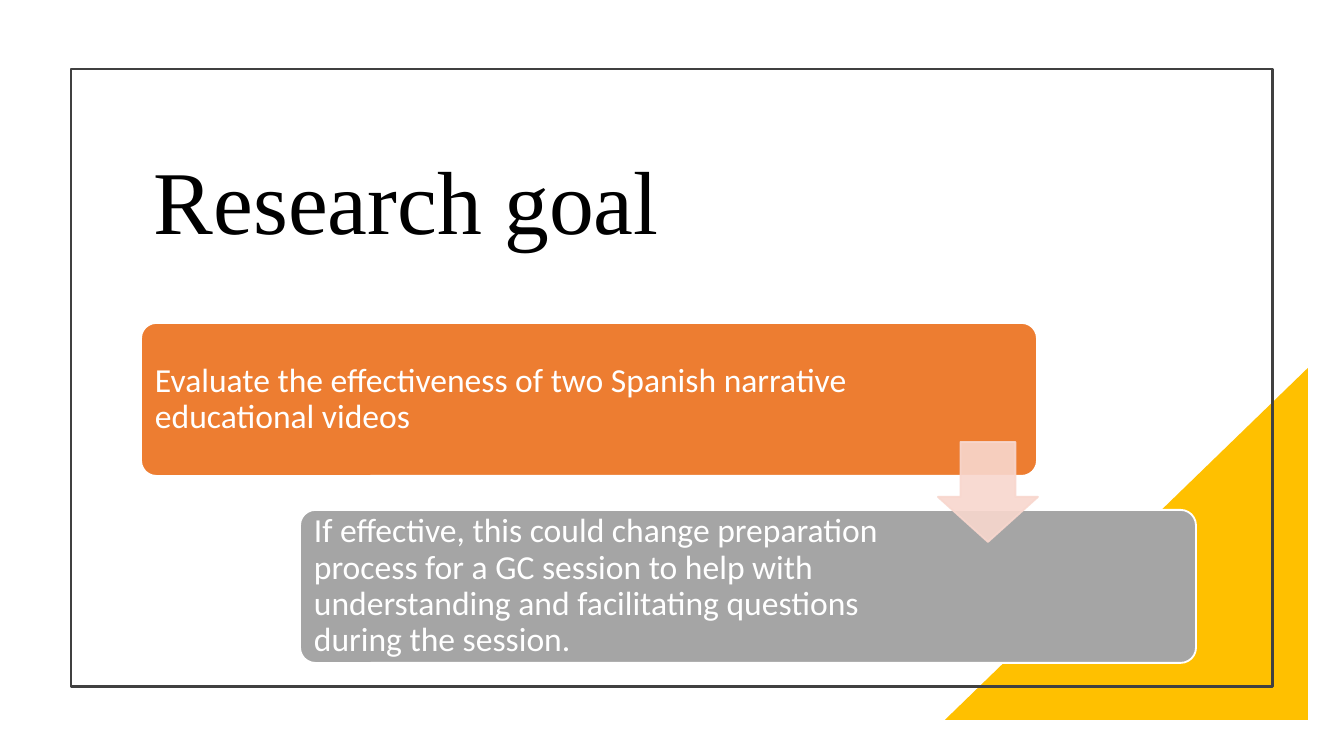
from lxml.etree import SubElement
from pptx import Presentation
from pptx.dml.color import RGBColor
from pptx.enum.shapes import MSO_SHAPE
from pptx.enum.text import MSO_ANCHOR
from pptx.oxml.ns import qn
from pptx.util import Pt

EMU_PER_PX = 914400 / 134.4

BLACK = RGBColor(0x00, 0x00, 0x00)
WHITE = RGBColor(0xFF, 0xFF, 0xFF)
CHARCOAL = RGBColor(0x40, 0x40, 0x40)
GOLD = RGBColor(0xFF, 0xC0, 0x00)
ORANGE = RGBColor(0xED, 0x7D, 0x31)
GRAY = RGBColor(0xA5, 0xA5, 0xA5)
PINK = RGBColor(0xF8, 0xD7, 0xCE)

# Wording, fill and text width of each step
STEPS = [
    ("Evaluate the effectiveness of two Spanish narrative educational videos",
     ORANGE, 738),
    ("If effective, this could change preparation process for a GC session "
     "to help with understanding and facilitating questions during the session.",
     GRAY, 629),
]
STEP_LEFT, STEP_TOP = 141, 323
STEP_WIDTH, STEP_HEIGHT = 896, 153
STEP_SHIFT_X, STEP_SHIFT_Y = 159, 187
TEXT_MARGIN = 5


def px(length):
    return round(length * EMU_PER_PX)


def add_preset(shapes, preset, box, fill=None, line=None, line_width=1,
               adjustments=()):
    shape = shapes.add_shape(preset, *map(px, box))
    shape.shadow.inherit = False
    for index, value in enumerate(adjustments):
        shape.adjustments[index] = value
    if fill is None:
        shape.fill.background()
    else:
        shape.fill.solid()
        shape.fill.fore_color.rgb = fill
    if line is None:
        shape.line.fill.background()
    else:
        shape.line.color.rgb = line
        shape.line.width = Pt(line_width)
    return shape


def add_text(shapes, text, box, size=18, font="Calibri", color=WHITE, inset=9):
    frame = shapes.add_textbox(*map(px, box)).text_frame
    frame.word_wrap = True
    frame.vertical_anchor = MSO_ANCHOR.MIDDLE
    frame.margin_left = frame.margin_right = px(inset)
    frame.margin_top = frame.margin_bottom = px(inset)
    paragraph = frame.paragraphs[0]
    paragraph.line_spacing = 0.9
    run = paragraph.add_run()
    run.text = text
    run.font.size = Pt(size)
    run.font.name = font
    run.font.color.rgb = color


def set_opacity(shape, percent):
    """Apply one opacity to the fill and the line."""
    for color in shape._element.spPr.iter(qn("a:srgbClr")):
        SubElement(color, qn("a:alpha")).set("val", str(percent * 1000))


def add_step(shapes, index, text, fill, text_width):
    left = STEP_LEFT + index * STEP_SHIFT_X
    top = STEP_TOP + index * STEP_SHIFT_Y
    add_preset(shapes, MSO_SHAPE.ROUNDED_RECTANGLE,
               (left, top, STEP_WIDTH, STEP_HEIGHT),
               fill=fill, line=WHITE, adjustments=[0.1])
    add_text(shapes, text, (left + TEXT_MARGIN, top + TEXT_MARGIN,
                            text_width, STEP_HEIGHT - 2 * TEXT_MARGIN))


def main():
    deck = Presentation()
    deck.slide_width, deck.slide_height = px(1344), px(756)
    slide = deck.slides.add_slide(deck.slide_layouts[6])
    shapes = slide.shapes

    corner = add_preset(shapes, MSO_SHAPE.RIGHT_TRIANGLE,
                        (945, 368, 363, 352), fill=GOLD)
    corner._element.spPr.xfrm.set("flipH", "1")
    add_preset(shapes, MSO_SHAPE.RECTANGLE, (71, 69, 1202, 618),
               line=CHARCOAL, line_width=1.5)
    add_text(shapes, "Research goal", (141, 116, 890, 179),
             size=48, font="Times New Roman", color=BLACK, inset=13)

    process = shapes.add_group_shape().shapes
    for index, step in enumerate(STEPS):
        add_step(process, index, *step)
    arrow = add_preset(process, MSO_SHAPE.DOWN_ARROW, (938, 442, 100, 100),
                       fill=PINK, line=PINK, adjustments=[0.55, 0.45])
    # Adjustment order of the arrow: shaft width, then head length
    arrow.adjustments[0], arrow.adjustments[1] = 0.55, 0.45
    set_opacity(arrow, 90)

    deck.save("out.pptx")


if __name__ == "__main__":
    main()
